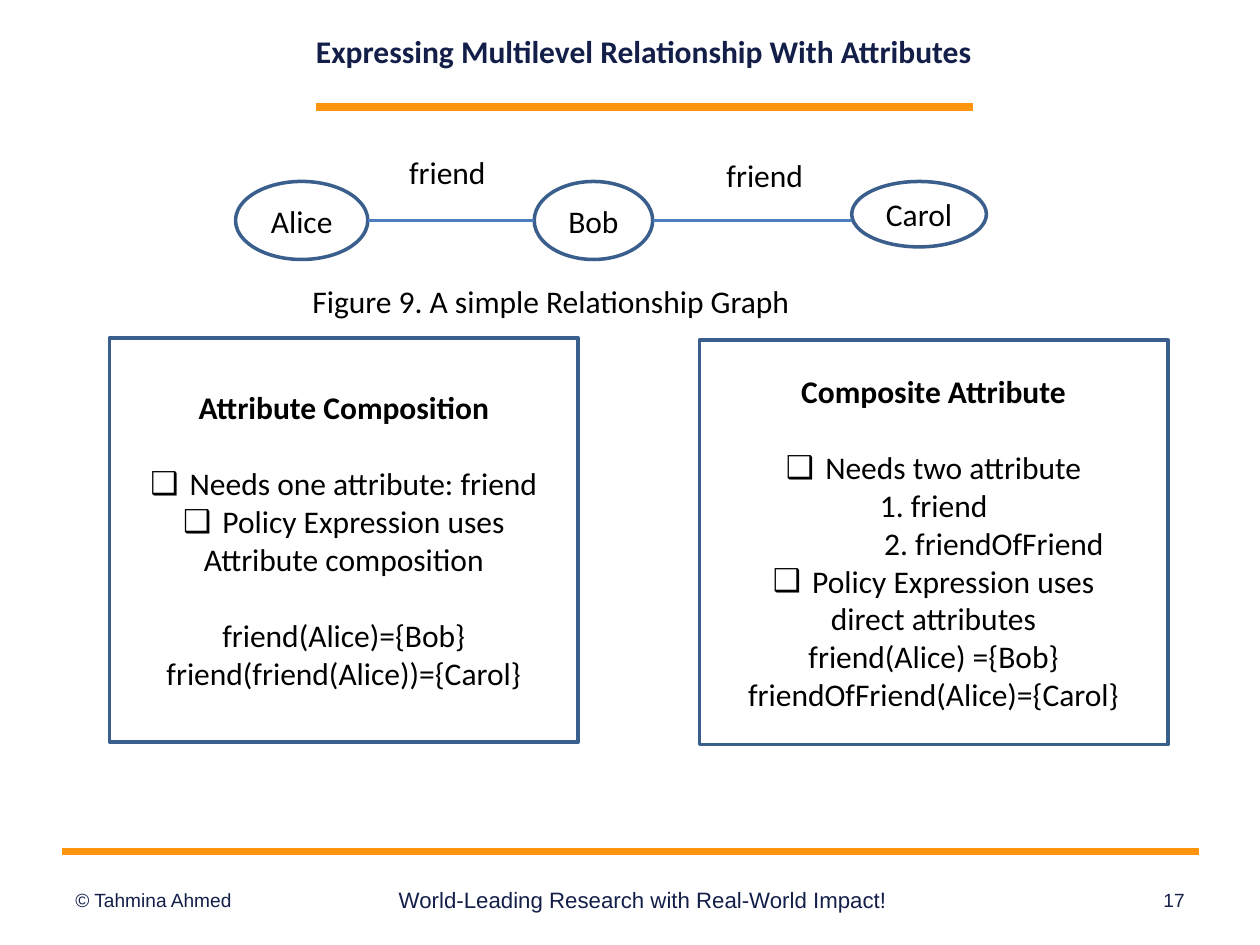
from dataclasses import dataclass

from lxml import etree
from pptx import Presentation
from pptx.dml.color import RGBColor
from pptx.enum.shapes import MSO_CONNECTOR, MSO_SHAPE
from pptx.enum.text import MSO_ANCHOR, PP_ALIGN
from pptx.oxml.ns import qn
from pptx.util import Pt

LEFT, CENTER, RIGHT = PP_ALIGN.LEFT, PP_ALIGN.CENTER, PP_ALIGN.RIGHT
MIDDLE, TOP = MSO_ANCHOR.MIDDLE, MSO_ANCHOR.TOP
OVAL, RECTANGLE = MSO_SHAPE.OVAL, MSO_SHAPE.RECTANGLE
STRAIGHT = MSO_CONNECTOR.STRAIGHT
TITLE_ONLY = 5


@dataclass(frozen=True)
class Theme:
    navy: RGBColor = RGBColor(0x13, 0x1F, 0x49)
    orange: RGBColor = RGBColor(0xFF, 0x95, 0x0E)
    outline: RGBColor = RGBColor(0x3A, 0x5F, 0x8C)
    edge: RGBColor = RGBColor(0x4B, 0x7E, 0xBC)
    black: RGBColor = RGBColor(0, 0, 0)
    white: RGBColor = RGBColor(0xFF, 0xFF, 0xFF)
    body_font: str = "Calibri"
    footer_font: str = "Arial"
    body_size: float = 18
    footer_size: float = 10.9
    motto_size: float = 12.7
    line_gap: float = 22
    bullet_indent: float = 22.5


THEME = Theme()


@dataclass(frozen=True)
class Line:
    text: str
    bold: bool = False
    bullet: bool = False
    gap: bool = False
    indent: float = 0


def place(shape, left, top, width, height):
    shape.left, shape.top = Pt(left), Pt(top)
    shape.width, shape.height = Pt(width), Pt(height)


def style(paragraph, color=THEME.black, size=THEME.body_size,
          font=THEME.body_font, bold=False, align=CENTER):
    paragraph.alignment = align
    paragraph.font.name = font
    paragraph.font.size = Pt(size)
    paragraph.font.bold = bold
    paragraph.font.color.rgb = color


def set_indent(paragraph, indent, bullet):
    properties = paragraph._p.get_or_add_pPr()
    properties.set("marL", str(Pt(indent)))
    if bullet:
        properties.set("indent", str(-Pt(indent)))
        etree.SubElement(properties, qn("a:buFont")).set("typeface", THEME.footer_font)
        etree.SubElement(properties, qn("a:buChar")).set("char", "❑")


def add_title(slide, text):
    title = slide.shapes.title
    place(title, 164.2, 4.3, 407.5, 49.7)
    title.text_frame.text = text
    title.text_frame.vertical_anchor = MIDDLE
    style(title.text_frame.paragraphs[0], color=THEME.navy, bold=True)


def add_line(slide, start, end, y, color, width):
    line = slide.shapes.add_connector(STRAIGHT, Pt(start), Pt(y), Pt(end), Pt(y))
    line.line.color.rgb = color
    line.line.width = Pt(width)
    etree.SubElement(line._element.spPr, qn("a:effectLst"))


def add_text(slide, text, left, top, width, height, anchor=MIDDLE, **font):
    box = slide.shapes.add_textbox(Pt(left), Pt(top), Pt(width), Pt(height))
    frame = box.text_frame
    frame.word_wrap = True
    frame.vertical_anchor = anchor
    frame.text = text
    style(frame.paragraphs[0], **font)


def add_panel(slide, kind, lines, left, top, width, height, filled=True, outlined=True):
    panel = slide.shapes.add_shape(kind, Pt(left), Pt(top), Pt(width), Pt(height))
    panel.shadow.inherit = False
    if filled:
        panel.fill.solid()
        panel.fill.fore_color.rgb = THEME.white
    else:
        panel.fill.background()
    if outlined:
        panel.line.color.rgb = THEME.outline
        panel.line.width = Pt(2)
    else:
        panel.line.fill.background()
    frame = panel.text_frame
    frame.word_wrap = True
    frame.vertical_anchor = MIDDLE
    for index, line in enumerate(lines):
        paragraph = frame.paragraphs[0] if index == 0 else frame.add_paragraph()
        paragraph.text = line.text
        if line.gap:
            paragraph.space_before = Pt(THEME.line_gap)
        if line.bullet or line.indent:
            set_indent(paragraph, line.indent or THEME.bullet_indent, line.bullet)
        style(paragraph, bold=line.bold)


def add_relationship_graph(slide):
    people = [("Alice", 134.6, 75.6, 44.6), ("Bob", 305.3, 67.7, 44.6),
              ("Carol", 486.7, 77, 37.4)]
    for name, left, width, height in people:
        add_panel(slide, OVAL, [Line(name)], left, 103.7, width, height, filled=False)
    for left, top in [(218.2, 79.9), (399.6, 81.4)]:
        add_panel(slide, RECTANGLE, [Line("friend")], left, top, 74.9, 36.7, outlined=False)
    for (_, left, width, _), (_, next_left, _, _) in zip(people, people[1:]):
        add_line(slide, left + width, next_left, 126, THEME.edge, 1.5)
    add_text(slide, "Figure 9. A simple Relationship Graph",
             171.4, 157.7, 323.3, 28.8, anchor=TOP, align=LEFT)


def add_comparison(slide):
    composition = [
        Line("Attribute Composition", bold=True),
        Line("Needs one attribute: friend", bullet=True, gap=True),
        Line("Policy Expression uses", bullet=True),
        Line("Attribute composition"),
        Line("friend(Alice)={Bob}", gap=True),
        Line("friend(friend(Alice))={Carol}"),
    ]
    composite = [
        Line("Composite Attribute", bold=True),
        Line("Needs two attribute", bullet=True, gap=True),
        Line("1. friend"),
        Line("2. friendOfFriend", indent=69),
        Line("Policy Expression uses", bullet=True),
        Line("direct attributes"),
        Line("friend(Alice) ={Bob}"),
        Line("friendOfFriend(Alice)={Carol}"),
    ]
    for lines, left, top in [(composition, 62.6, 193), (composite, 399.6, 194.4)]:
        add_panel(slide, RECTANGLE, lines, left, top, 267.8, 231.1)


def add_footer(slide):
    entries = [
        ("© Tahmina Ahmed", 36, 167.8, THEME.footer_size, LEFT),
        ("World-Leading Research with Real-World Impact!", 218.2, 298.1,
         THEME.motto_size, CENTER),
        ("17", 529.2, 154.8, THEME.footer_size, RIGHT),
    ]
    for text, left, width, size, align in entries:
        add_text(slide, text, left, 499.7, width, 28.8, color=THEME.navy,
                 size=size, font=THEME.footer_font, align=align)


def main():
    deck = Presentation()
    deck.slide_width, deck.slide_height = Pt(720), Pt(540)
    slide = deck.slides.add_slide(deck.slide_layouts[TITLE_ONLY])
    add_title(slide, "Expressing Multilevel Relationship With Attributes")
    add_line(slide, 180.7, 555.8, 61.2, THEME.orange, 4.31)
    add_line(slide, 35.3, 685.4, 486.7, THEME.orange, 4.31)
    add_footer(slide)
    add_relationship_graph(slide)
    add_comparison(slide)
    deck.save("out.pptx")


if __name__ == "__main__":
    main()
